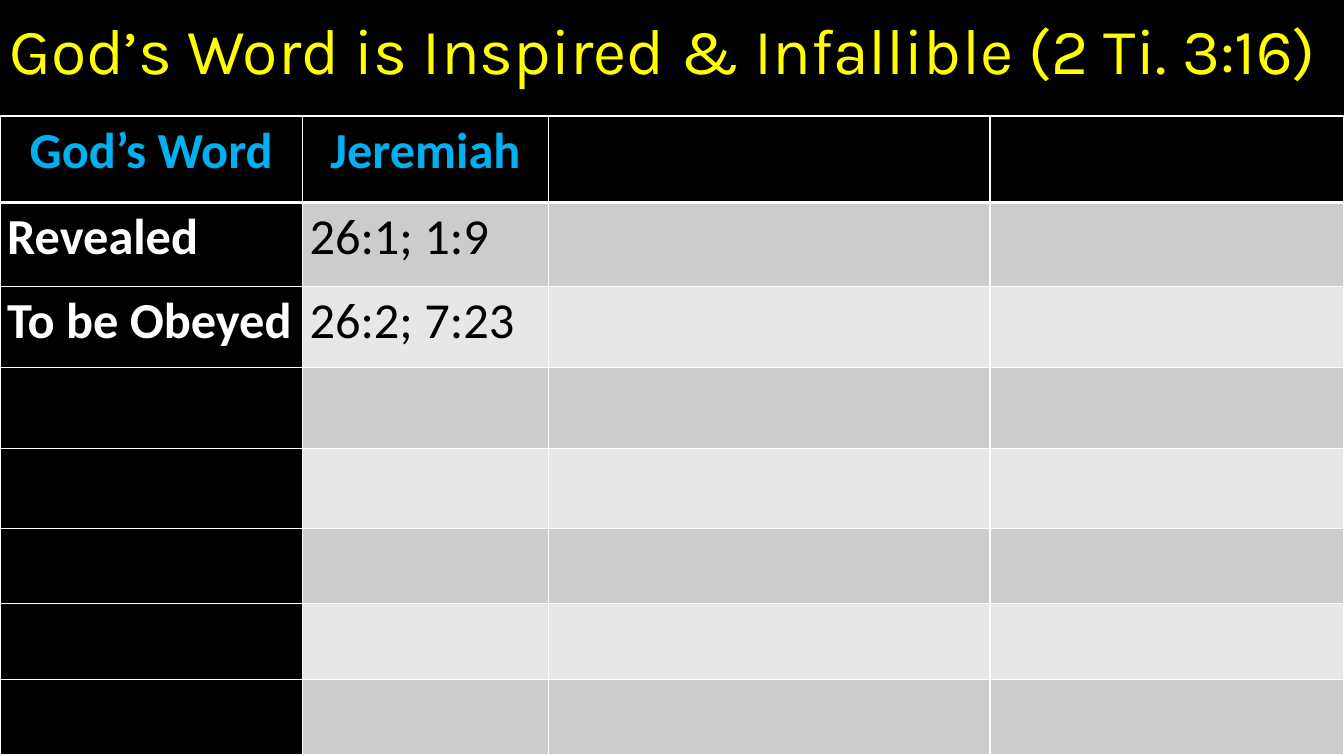
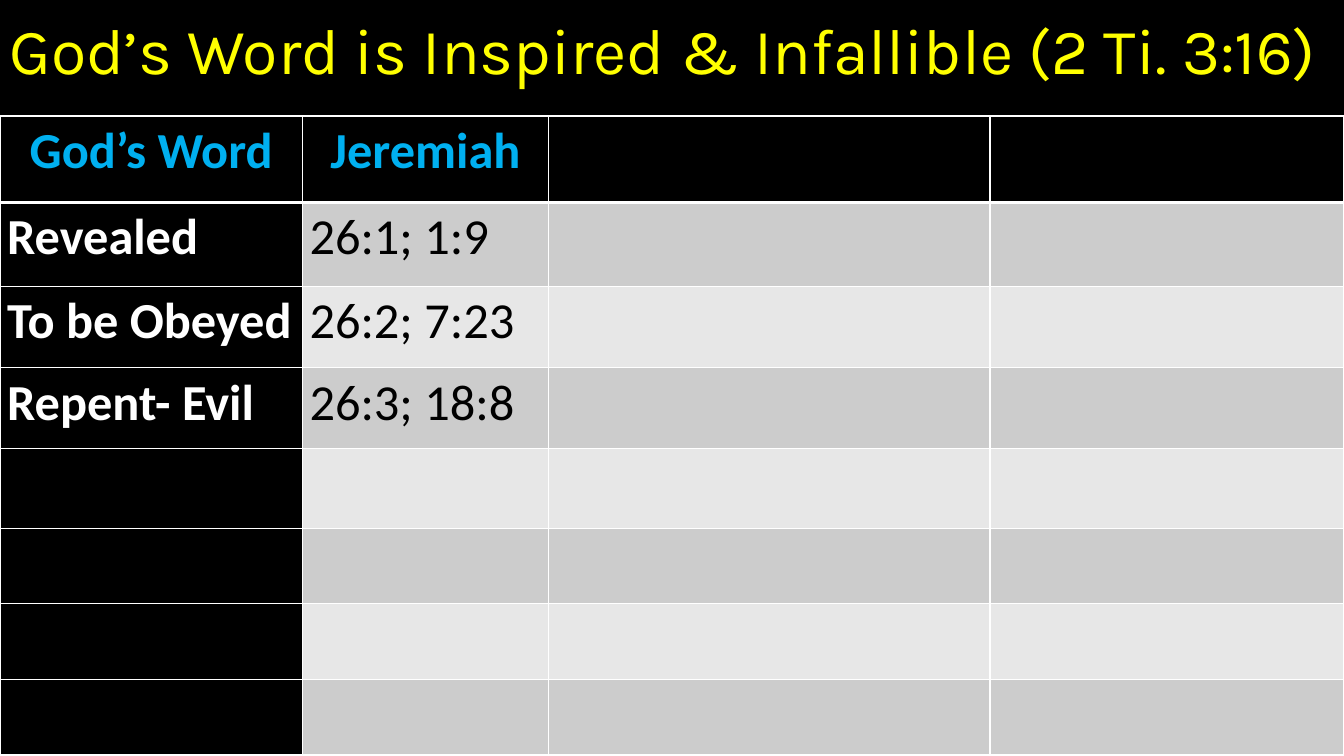
from lxml.etree import SubElement
from pptx import Presentation
from pptx.dml.color import RGBColor
from pptx.enum.text import MSO_ANCHOR, PP_ALIGN
from pptx.oxml.ns import qn
from pptx.util import Inches, Pt

WIDTH, HEIGHT = 13.33, 7.5
TITLE_HEIGHT = 1.06
TABLE_TOP = 1.15
COLUMNS = [3, 2.44, 4.38, 3.51]
ROWS = [0.86, 0.83, 0.81, 0.8, 0.79, 0.75, 0.75, 0.75]
BLACK, WHITE, YELLOW, BLUE = "000000", "FFFFFF", "FFFF00", "00B0F0"
BANDS = ["E7E7E7", "CCCCCC"]

TITLE = "God’s Word is Inspired & Infallible (2 Ti. 3:16)"
HEADER = ("God’s Word", "Jeremiah")
VERSES = [
    ("Revealed", "26:1; 1:9"),
    ("To be Obeyed", "26:2; 7:23"),
    ("Repent- Evil", "26:3; 18:8"),
]


def color(value):
    return RGBColor.from_string(value)


def style(para, name, size, tint, bold=False, spacing=1.0, align=PP_ALIGN.LEFT):
    para.alignment = align
    para.line_spacing = spacing
    font = para.font
    font.name, font.size, font.bold = name, Pt(size), bold
    font.color.rgb = color(tint)


def add_title(page):
    box = page.shapes.add_textbox(0, 0, Inches(WIDTH), Inches(TITLE_HEIGHT))
    frame = box.text_frame
    frame.word_wrap = True
    frame.vertical_anchor = MSO_ANCHOR.MIDDLE
    frame.text = TITLE
    style(frame.paragraphs[0], "Karla", 46, YELLOW, spacing=0.9)


def add_borders(cell, top, bottom):
    properties = cell._tc.get_or_add_tcPr()
    for side, width in (("L", 1), ("R", 1), ("T", top), ("B", bottom)):
        line = SubElement(properties, qn(f"a:ln{side}"), w=str(Pt(width)))
        fill = SubElement(line, qn("a:solidFill"))
        SubElement(fill, qn("a:srgbClr"), val=WHITE)


def format_cell(cell, row, column):
    is_header, is_label = row == 0, column == 0
    add_borders(cell, 3 if row == 1 else 1, 3 if is_header else 1)
    cell.fill.solid()
    cell.fill.fore_color.rgb = color(BLACK if is_header or is_label else BANDS[row % 2])
    cell.margin_left = cell.margin_right = Inches(0.07)
    cell.margin_top = cell.margin_bottom = 0


def write_cell(cell, text, row, column):
    cell.text = text
    tint = BLUE if row == 0 else WHITE if column == 0 else BLACK
    align = PP_ALIGN.CENTER if row == 0 else PP_ALIGN.LEFT
    style(cell.text_frame.paragraphs[0], "Calibri", 36, tint,
          bold=row == 0 or column == 0, spacing=1.07, align=align)


def add_verse_table(page, verses):
    table = page.shapes.add_table(
        len(ROWS), len(COLUMNS), 0, Inches(TABLE_TOP),
        Inches(sum(COLUMNS)), Inches(sum(ROWS))).table
    for column, width in zip(table.columns, COLUMNS):
        column.width = Inches(width)
    for row, height in zip(table.rows, ROWS):
        row.height = Inches(height)
    for row in range(len(ROWS)):
        for column in range(len(COLUMNS)):
            format_cell(table.cell(row, column), row, column)
    for row, texts in enumerate([HEADER, *verses]):
        for column, text in enumerate(texts):
            write_cell(table.cell(row, column), text, row, column)


def add_page(deck, verses):
    page = deck.slides.add_slide(deck.slide_layouts[6])
    page.background.fill.solid()
    page.background.fill.fore_color.rgb = color(BLACK)
    add_title(page)
    add_verse_table(page, verses)


def main():
    deck = Presentation()
    deck.slide_width, deck.slide_height = Inches(WIDTH), Inches(HEIGHT)
    for shown in (2, 3):
        add_page(deck, VERSES[:shown])
    deck.save("out.pptx")


if __name__ == "__main__":
    main()
